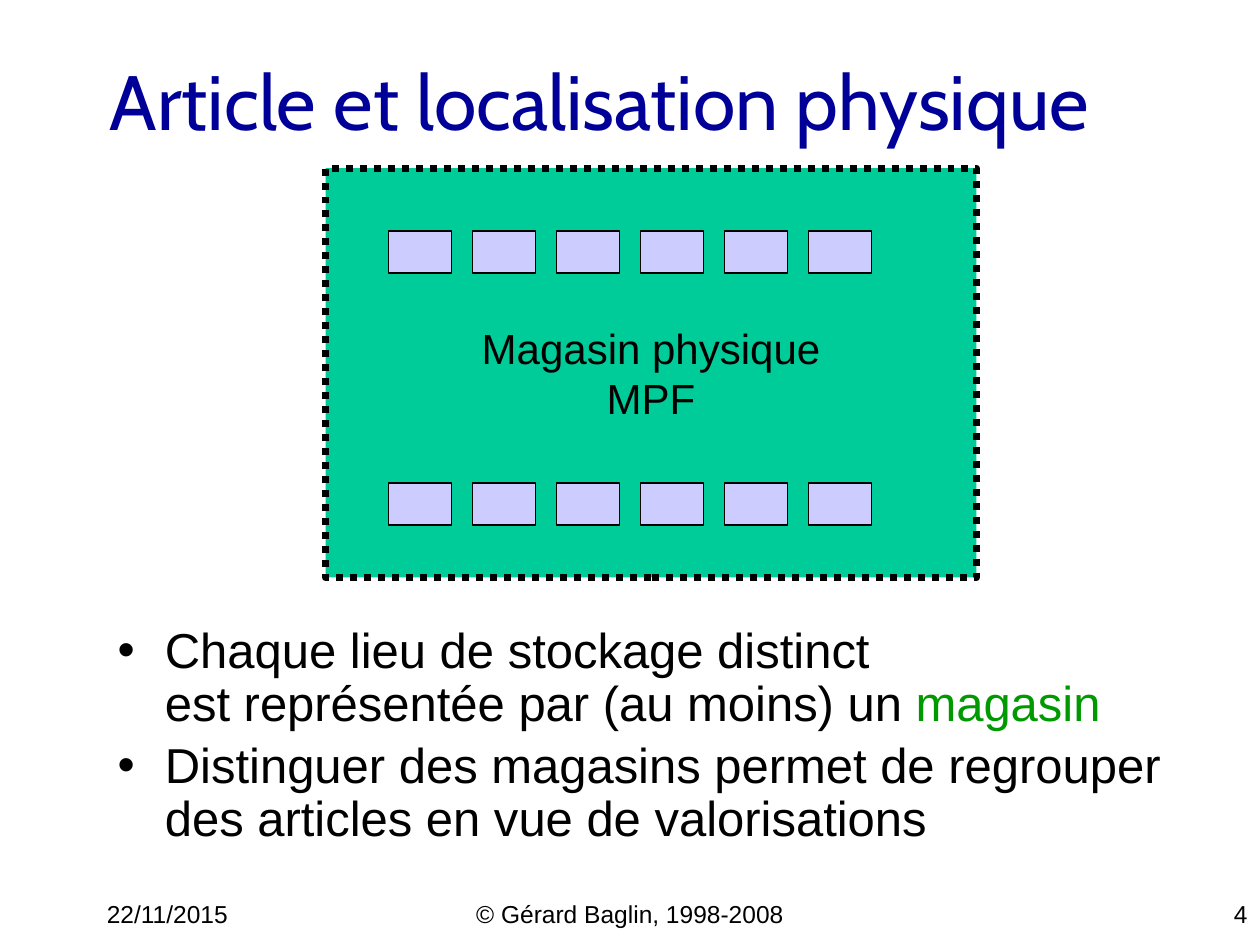
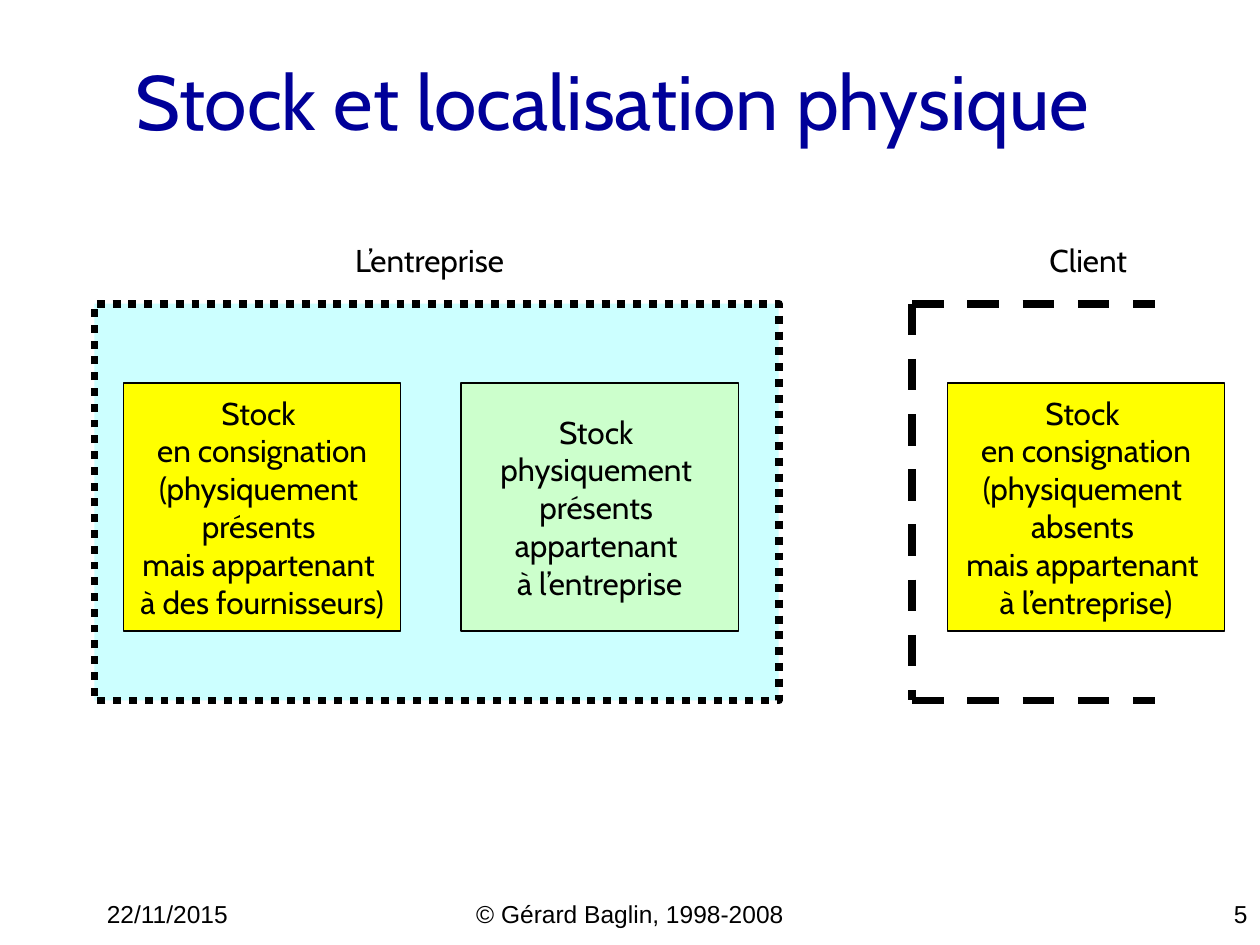
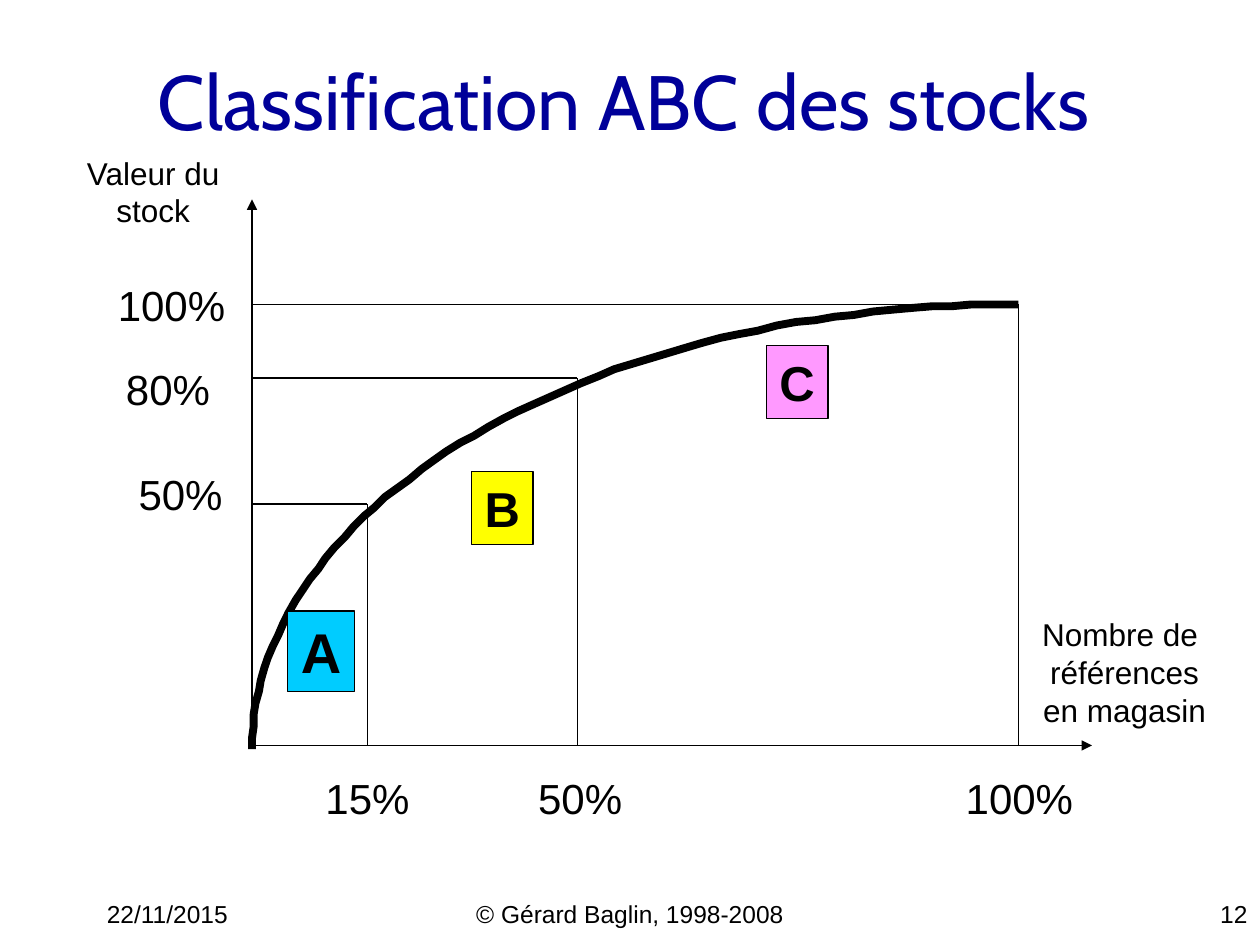
"""Build three slides on stock location and ABC classification."""
import math

from lxml import etree
from pptx import Presentation
from pptx.dml.color import RGBColor
from pptx.enum import dml, shapes, text as t
from pptx.oxml import ns
from pptx.util import Pt

BLACK, NAVY, GREEN, YELLOW = "000000", "000099", "009900", "FFFF00"
LEFT, CENTER, RIGHT = t.PP_ALIGN.LEFT, t.PP_ALIGN.CENTER, t.PP_ALIGN.RIGHT
TOP, MIDDLE = t.MSO_ANCHOR.TOP, t.MSO_ANCHOR.MIDDLE
DOTTED, DASHED = dml.MSO_LINE.ROUND_DOT, dml.MSO_LINE.DASH
TITLE_ONLY, TITLE_AND_BODY = 5, 1

DATE, COPYRIGHT = "22/11/2015", "© Gérard Baglin, 1998-2008"

WAREHOUSE = ["Magasin physique", "MPF"]
WAREHOUSE_BOX = (186, 96, 372, 234)
SHELF_ROWS, SHELF_COUNT, SHELF_LEFT, SHELF_STEP = (132, 276), 6, 222, 48
BULLETS = [
    [("Chaque lieu de stockage distinct\nest représentée par (au moins) un ", BLACK), ("magasin", GREEN)],
    "Distinguer des magasins permet de regrouper des articles en vue de valorisations",
]

COMPANY_BOX = (54, 173.5, 391, 226.8)
CLIENT_LEFT, CLIENT_RIGHT, CLIENT_TOP, CLIENT_BOTTOM = 521.3, 660.2, 173.5, 400.3
OWNERS = [("L’entreprise", (195.8, 134, 106.6, 28.8)), ("Client", (592.6, 134, 59, 28.8))]
STOCKS = [
    (70.6, YELLOW, ["Stock \nen consignation",
                    "(physiquement \nprésents \nmais appartenant \nà des fournisseurs)"]),
    (541.4, YELLOW, ["Stock \nen consignation",
                     "(physiquement \nabsents \nmais appartenant \nà l’entreprise)"]),
    (263.5, "CCFFCC", ["Stock \nphysiquement \nprésents \nappartenant \nà l’entreprise"]),
]

ORIGIN_X, ORIGIN_Y, AXIS_TOP, AXIS_RIGHT = 144, 426, 114, 624
THRESHOLDS = [(210, 288), (330, 216), (582, 174)]
PERCENTS = [
    ("100%", 98, 174), ("80%", 96, 222), ("50%", 103.2, 282),
    ("15%", 210, 456), ("50%", 331.5, 456), ("100%", 582.5, 456),
]
AXIS_NAMES = [
    (["Valeur du", "stock"], (41.8, 84.2, 91.4, 50.4)),
    (["Nombre de ", "références", "en magasin"], (588.2, 347.8, 108.7, 72)),
]
CLASSES = [
    ("A", 32, "00CCFF", (164.4, 349.2, 38.2, 46.1)),
    ("B", 28, YELLOW, (269.3, 269.3, 35.3, 41.8)),
    ("C", 28, "FF99FF", (437.8, 197.3, 35.3, 41.8)),
]


def color(value):
    """Turn a hex string into a colour."""
    return RGBColor.from_string(value)


def points(*lengths):
    """Turn plain numbers into lengths in points."""
    return [Pt(length) for length in lengths]


def write(shape, content, size=18, font="Arial", ink=BLACK, bold=False,
          align=CENTER, anchor=MIDDLE, wrap=False, spacing=None):
    """Fill a shape with formatted paragraphs, each a string or a list of coloured runs."""
    frame = shape.text_frame
    frame.auto_size = t.MSO_AUTO_SIZE.NONE
    frame.word_wrap, frame.vertical_anchor = wrap, anchor
    for index, runs in enumerate([content] if isinstance(content, str) else content):
        paragraph = frame.add_paragraph() if index else frame.paragraphs[0]
        paragraph.alignment = align
        if spacing:
            paragraph.line_spacing = spacing
        for words, run_ink in [(runs, ink)] if isinstance(runs, str) else runs:
            for number, line in enumerate(words.split("\n")):
                if number:
                    paragraph.add_line_break()
                run = paragraph.add_run()
                run.text = line
                run.font.name, run.font.size, run.font.bold = font, Pt(size), bold
                run.font.color.rgb = color(run_ink)


def place(shape, box):
    """Move and size a placeholder."""
    shape.left, shape.top, shape.width, shape.height = points(*box)
    return shape


def add_label(slide, content, box, **style):
    """Add a text box."""
    write(slide.shapes.add_textbox(*points(*box)), content, **style)


def draw_outline(shape, weight, dash=None):
    """Give a shape or connector a black line."""
    shape.line.color.rgb, shape.line.width = color(BLACK), Pt(weight)
    if dash:
        shape.line.dash_style = dash


def add_box(slide, box, fill, weight=0.75, dash=None, content=None, **style):
    """Add a filled rectangle, with text if there is any."""
    shape = slide.shapes.add_shape(shapes.MSO_SHAPE.RECTANGLE, *points(*box))
    shape.shadow.inherit = False
    shape.fill.solid()
    shape.fill.fore_color.rgb = color(fill)
    draw_outline(shape, weight, dash)
    if content:
        write(shape, content, **style)


def add_line(slide, start, end, weight=0.75, dash=None, arrow=False):
    """Add a straight line, with an arrowhead at its end if asked."""
    line = slide.shapes.add_connector(shapes.MSO_CONNECTOR.STRAIGHT, *points(*start, *end))
    draw_outline(line, weight, dash)
    if arrow:
        etree.SubElement(line.line._get_or_add_ln(), ns.qn("a:tailEnd"), type="triangle")
    etree.SubElement(line._element.spPr, ns.qn("a:effectLst"))


def add_slide(presentation, title, number, layout=TITLE_ONLY):
    """Add a slide with the shared title and footer."""
    slide = presentation.slides.add_slide(presentation.slide_layouts[layout])
    write(place(slide.shapes.title, (18, 12, 612, 90)), title,
          size=44, font="Cabin", ink=NAVY, align=RIGHT, wrap=True)
    for words, left, width, align in [(DATE, 54, 150, LEFT), (COPYRIGHT, 246, 228, CENTER),
                                      (str(number), 570, 150, RIGHT)]:
        add_label(slide, words, (left, 510, width, 18), size=14, align=align, anchor=TOP, wrap=True)
    return slide


def build_warehouse(presentation):
    """Show a warehouse with its shelves."""
    slide = add_slide(presentation, "Article et localisation physique", 4, TITLE_AND_BODY)
    write(place(slide.placeholders[1], (60, 354, 612, 132)), BULLETS,
          size=28, align=LEFT, anchor=TOP, wrap=True, spacing=0.9)
    add_box(slide, WAREHOUSE_BOX, "00CC99", 4, DOTTED, WAREHOUSE, size=24)
    for top in SHELF_ROWS:
        for column in range(SHELF_COUNT):
            add_box(slide, (SHELF_LEFT + column * SHELF_STEP, top, 36, 24), "CCCCFF")


def build_consignment(presentation):
    """Show stock held by the company and by its client."""
    slide = add_slide(presentation, "Stock et localisation physique", 5)
    add_box(slide, COMPANY_BOX, "CCFFFF", 4.5, DOTTED)
    corner = (CLIENT_LEFT, CLIENT_TOP)
    for start, end in [(corner, (CLIENT_RIGHT, CLIENT_TOP)),
                       (corner, (CLIENT_LEFT, CLIENT_BOTTOM)),
                       ((CLIENT_LEFT, CLIENT_BOTTOM), (CLIENT_RIGHT, CLIENT_BOTTOM))]:
        add_line(slide, start, end, 4.5, DASHED)
    for owner, box in OWNERS:
        add_label(slide, owner, box, font="Cabin", align=LEFT, anchor=TOP)
    for left, fill, content in STOCKS:
        add_box(slide, (left, 218.9, 158.4, 141.8), fill, content=content, font="Cabin")


def add_curve(slide):
    """Draw the cumulative value as a quarter ellipse ending in a short flat."""
    width, height, base, steps = 434, 254.4, 428.4, 60
    angles = [math.pi / 2 * step / steps for step in range(steps + 1)]
    vertices = [(ORIGIN_X + width * (1 - math.cos(angle)), base - height * math.sin(angle))
                for angle in angles] + [THRESHOLDS[-1]]
    builder = slide.shapes.build_freeform(*vertices[0], scale=Pt(1))
    builder.add_line_segments(vertices[1:], close=False)
    curve = builder.convert_to_shape()
    curve.shadow.inherit = False
    curve.fill.background()
    draw_outline(curve, 4.5)


def build_classification(presentation):
    """Show the ABC curve with its thresholds and classes."""
    slide = add_slide(presentation, "Classification ABC des stocks", 12)
    origin = (ORIGIN_X, ORIGIN_Y)
    add_line(slide, origin, (ORIGIN_X, AXIS_TOP), arrow=True)
    add_line(slide, origin, (AXIS_RIGHT, ORIGIN_Y), arrow=True)
    add_curve(slide)
    for x, y in THRESHOLDS:
        add_line(slide, (ORIGIN_X, y), (x, y))
        add_line(slide, (x, y), (x, ORIGIN_Y))
    for percent, x, y in PERCENTS:
        width = 76 if percent == "100%" else 62
        add_label(slide, percent, (x - width / 2, y - 18, width, 36), size=24)
    for letter, size, fill, box in CLASSES:
        add_box(slide, box, fill, content=letter, size=size, bold=True)
    for name, box in AXIS_NAMES:
        add_label(slide, name, box)


def main():
    """Build and save the presentation."""
    presentation = Presentation()
    presentation.slide_width, presentation.slide_height = points(720, 540)
    build_warehouse(presentation)
    build_consignment(presentation)
    build_classification(presentation)
    presentation.save("out.pptx")


if __name__ == "__main__":
    main()
